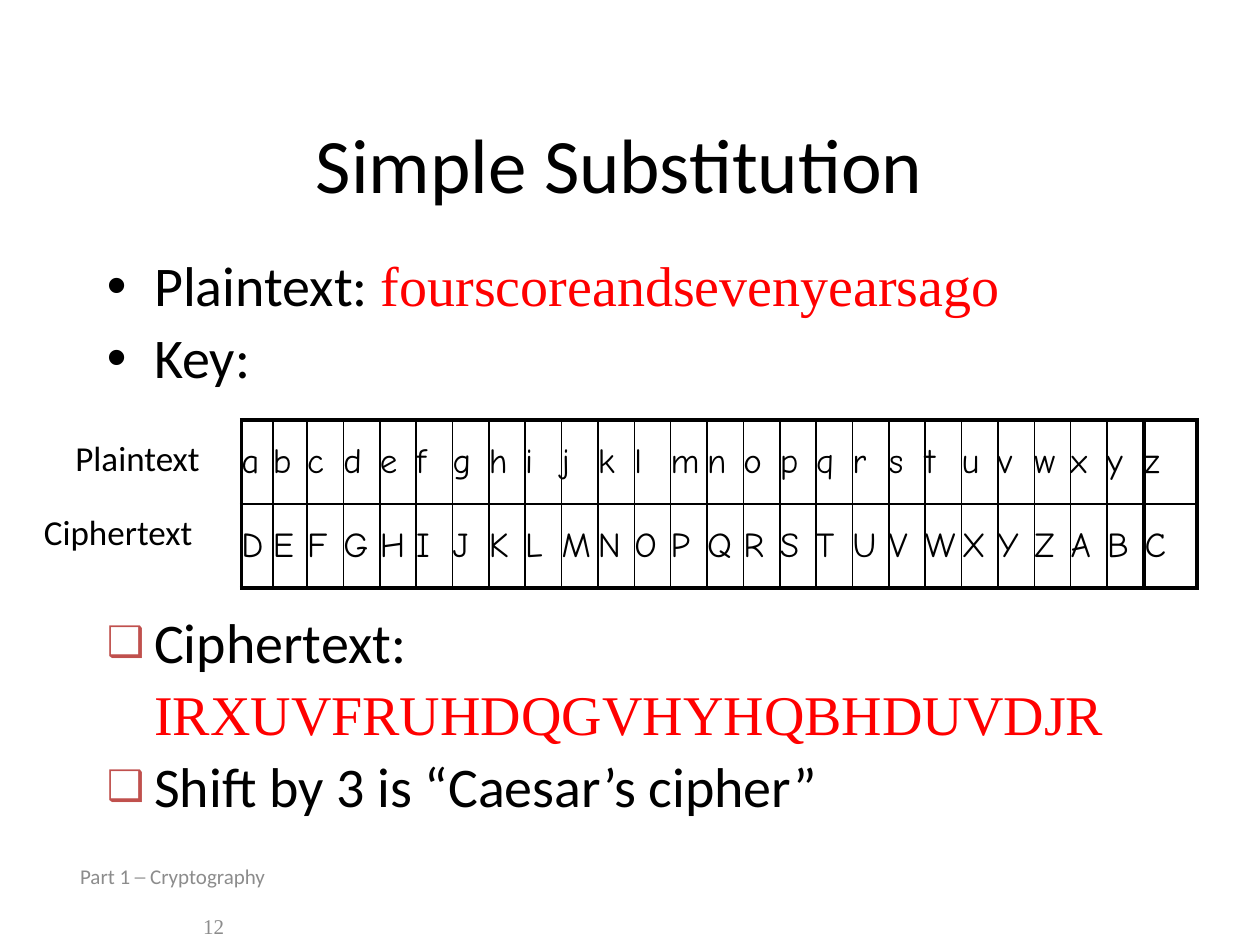
from lxml import etree
from pptx import Presentation
from pptx.dml import color
from pptx.enum import text
from pptx.oxml import ns
from pptx.util import Pt

BLACK, RED, GRAY, BRICK = "000000", "FF0000", "8C8C8C", "C0504D"
SANS, SERIF, HAND = "Calibri", "Times New Roman", "Comic Neue"


def rgb(value):
    return color.RGBColor.from_string(value)


def child(parent, tag, **attributes):
    return etree.SubElement(parent, ns.qn(tag), attributes)


class SlideBuilder:
    thin, thick = 1, 2.25
    hanging = 27

    def __init__(self, slide):
        self.slide = slide

    def run(self, paragraph, content, size, font=SANS, ink=BLACK):
        run = paragraph.add_run()
        run.text = content
        run.font.size = Pt(size)
        run.font.name = font
        run.font.color.rgb = rgb(ink)

    def indent(self, paragraph, margin, first=0):
        properties = paragraph._p.get_or_add_pPr()
        properties.set("marL", str(Pt(margin)))
        properties.set("indent", str(Pt(first)))
        return properties

    def title(self, content, left, top, width, height):
        shape = self.slide.shapes.title
        shape.left, shape.top, shape.width, shape.height = map(Pt, (left, top, width, height))
        shape.text_frame.vertical_anchor = text.MSO_ANCHOR.MIDDLE
        paragraph = shape.text_frame.paragraphs[0]
        paragraph.alignment = text.PP_ALIGN.CENTER
        self.run(paragraph, content, 44)

    def text_box(self, left, top, width, height, wrap=True):
        shape = self.slide.shapes.add_textbox(*map(Pt, (left, top, width, height)))
        shape.text_frame.word_wrap = wrap
        return shape.text_frame

    def label(self, content, left, top, width, height):
        frame = self.text_box(left, top, width, height, wrap=False)
        frame.auto_size = text.MSO_AUTO_SIZE.SHAPE_TO_FIT_TEXT
        self.run(frame.paragraphs[0], content, 20)

    def bullet(self, properties, character, ink=None, percent=100):
        if ink:
            child(child(properties, "a:buClr"), "a:srgbClr", val=ink)
        child(properties, "a:buSzPct", val=str(percent * 1000))
        child(properties, "a:buFont", typeface="Arial")
        child(properties, "a:buChar", char=character)

    def body(self, items, left, top, width, height):
        frame = self.text_box(left, top, width, height)
        for index, (marker, runs) in enumerate(items):
            paragraph = frame.add_paragraph() if index else frame.paragraphs[0]
            paragraph.line_spacing = 0.9
            paragraph.space_before = Pt(6.4)
            properties = self.indent(paragraph, self.hanging, -self.hanging if marker else 0)
            if marker:
                self.bullet(properties, *marker)
            for content, font, ink in runs:
                self.run(paragraph, content, 32, font, ink)

    def borders(self, cell, widths):
        properties = cell._tc.get_or_add_tcPr()
        for index, (side, width) in enumerate(zip("LRTB", widths)):
            line = etree.Element(ns.qn("a:ln" + side), w=str(Pt(width)))
            child(child(line, "a:solidFill"), "a:srgbClr", val=BLACK)
            properties.insert(index, line)

    def table(self, rows, widths, left, top, row_height):
        shape = self.slide.shapes.add_table(
            len(rows), len(widths), Pt(left), Pt(top), Pt(sum(widths)), Pt(row_height * len(rows)))
        table = shape.table
        table.first_row = table.horz_banding = False
        for column, width in zip(table.columns, widths):
            column.width = Pt(width)
        for row_index, letters in enumerate(rows):
            for column_index, letter in enumerate(letters):
                cell = table.cell(row_index, column_index)
                cell.margin_left = cell.margin_right = cell.margin_top = cell.margin_bottom = 0
                cell.vertical_anchor = text.MSO_ANCHOR.MIDDLE
                cell.fill.background()
                outer = (column_index == 0, column_index == len(widths) - 1,
                         row_index == 0, row_index == len(rows) - 1)
                self.borders(cell, [self.thick if edge else self.thin for edge in outer])
                paragraph = cell.text_frame.paragraphs[0]
                paragraph.space_before = Pt(4)
                self.run(paragraph, letter, 20, HAND)

    def footer(self, content, number, left, top, width, height):
        frame = self.text_box(left, top, width, height)
        frame.vertical_anchor = text.MSO_ANCHOR.MIDDLE
        first = frame.paragraphs[0]
        self.indent(first, 2.7)
        self.run(first, content, 12, SANS, GRAY)
        second = frame.add_paragraph()
        second.space_before = Pt(14)
        self.indent(second, 73)
        self.run(second, number, 12, SERIF, GRAY)


def main():
    presentation = Presentation()
    presentation.slide_width, presentation.slide_height = Pt(720), Pt(540)
    builder = SlideBuilder(presentation.slides.add_slide(presentation.slide_layouts[5]))

    dot, box = ("•",), ("❑", BRICK, 75)
    plain = "abcdefghijklmnopqrstuvwxyz"
    shifted = (plain[3:] + plain[:3]).upper()
    key = [plain, shifted]
    widths = [18, 19.5] + [20.8] * 23

    builder.footer("Part 1 ─ Cryptography", "12", 36, 500.4, 168, 28.8)
    builder.title("Simple Substitution", 42, 48, 624, 90)
    builder.body([
        (dot, [("Plaintext: ", SANS, BLACK), ("fourscoreandsevenyearsago", SERIF, RED)]),
        (dot, [("Key:", SANS, BLACK)]),
    ], 54, 144, 618, 102)
    builder.table([row[:-1] for row in key], widths, 138, 240, 48)
    builder.table([row[-1] for row in key], [30], 654, 240, 48)
    builder.body([
        (box, [("Ciphertext:", SANS, BLACK)]),
        (None, [("IRXUVFRUHDQGVHYHQBHDUVDJR", SERIF, RED)]),
        (box, [("Shift by 3 is “Caesar’s cipher”", SANS, BLACK)]),
    ], 54, 348, 612, 132)
    builder.label("Plaintext", 36, 246, 98, 35)
    builder.label("Ciphertext", 18, 288, 117, 35)
    presentation.save("out.pptx")


if __name__ == "__main__":
    main()
